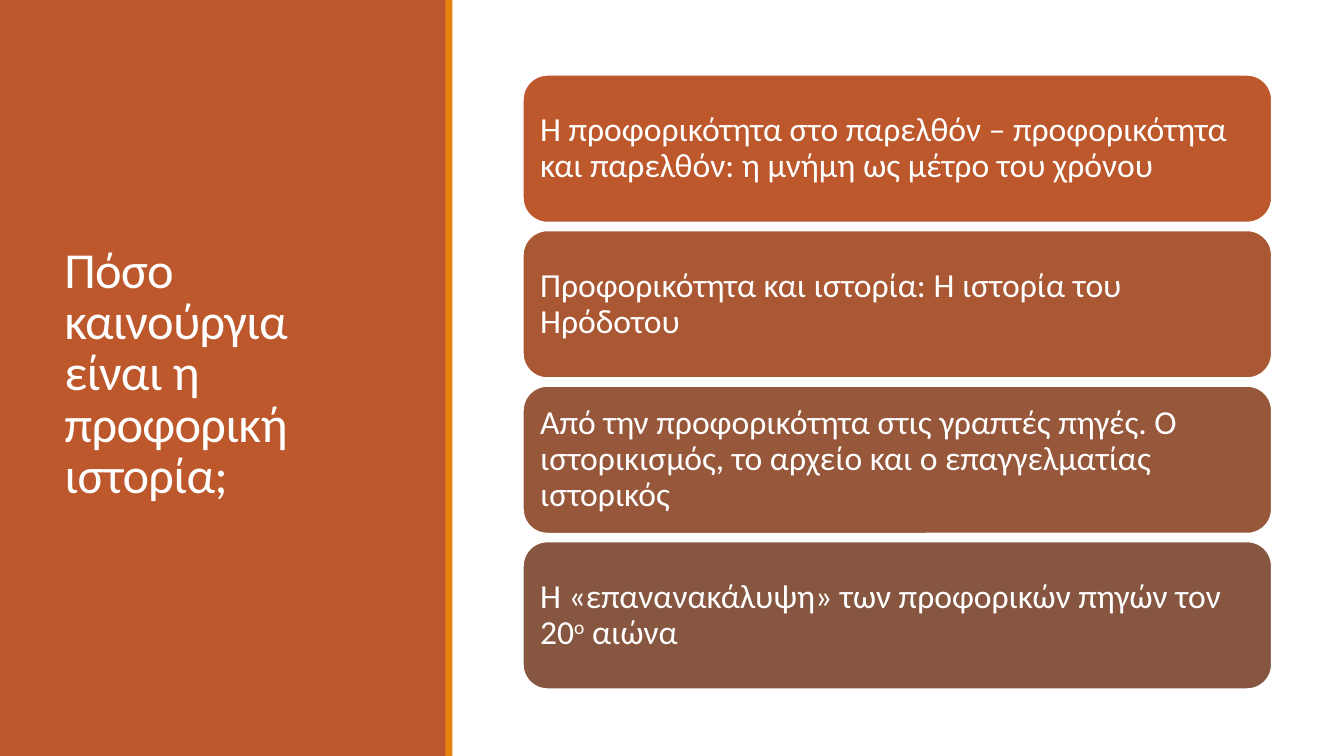
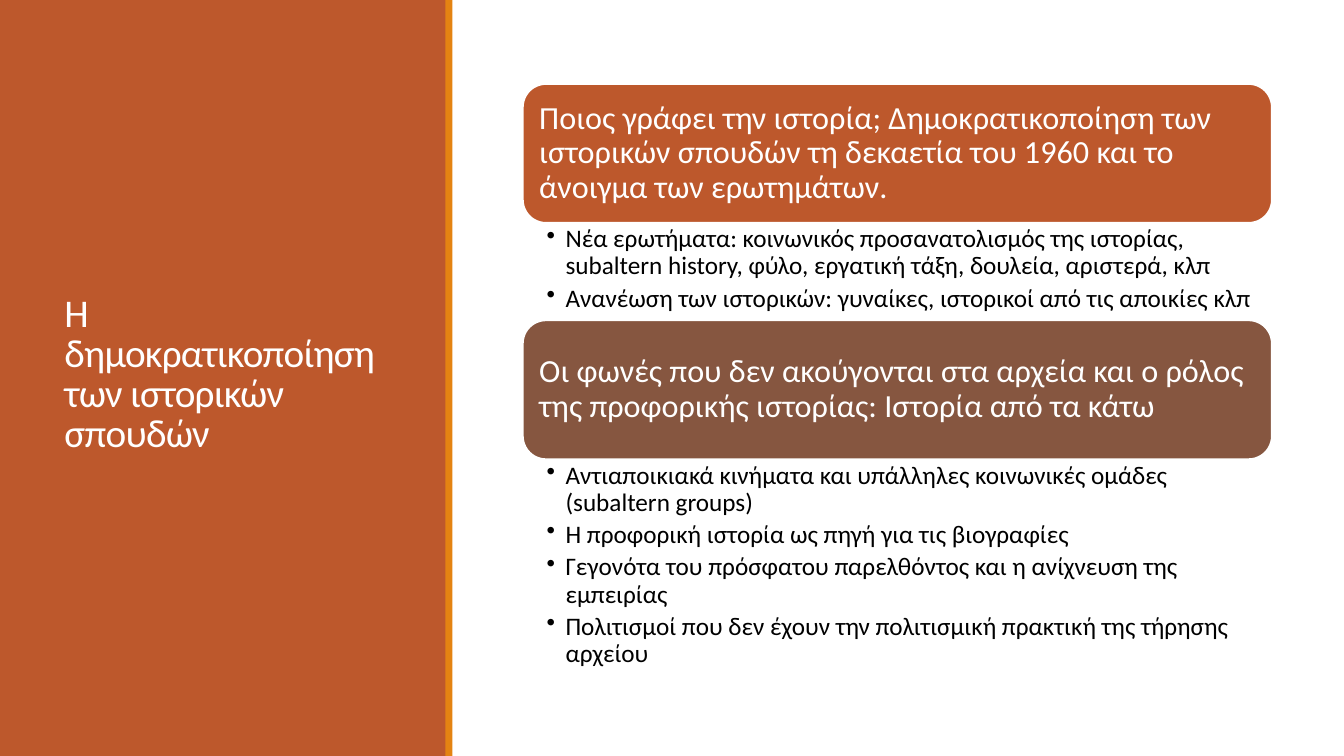
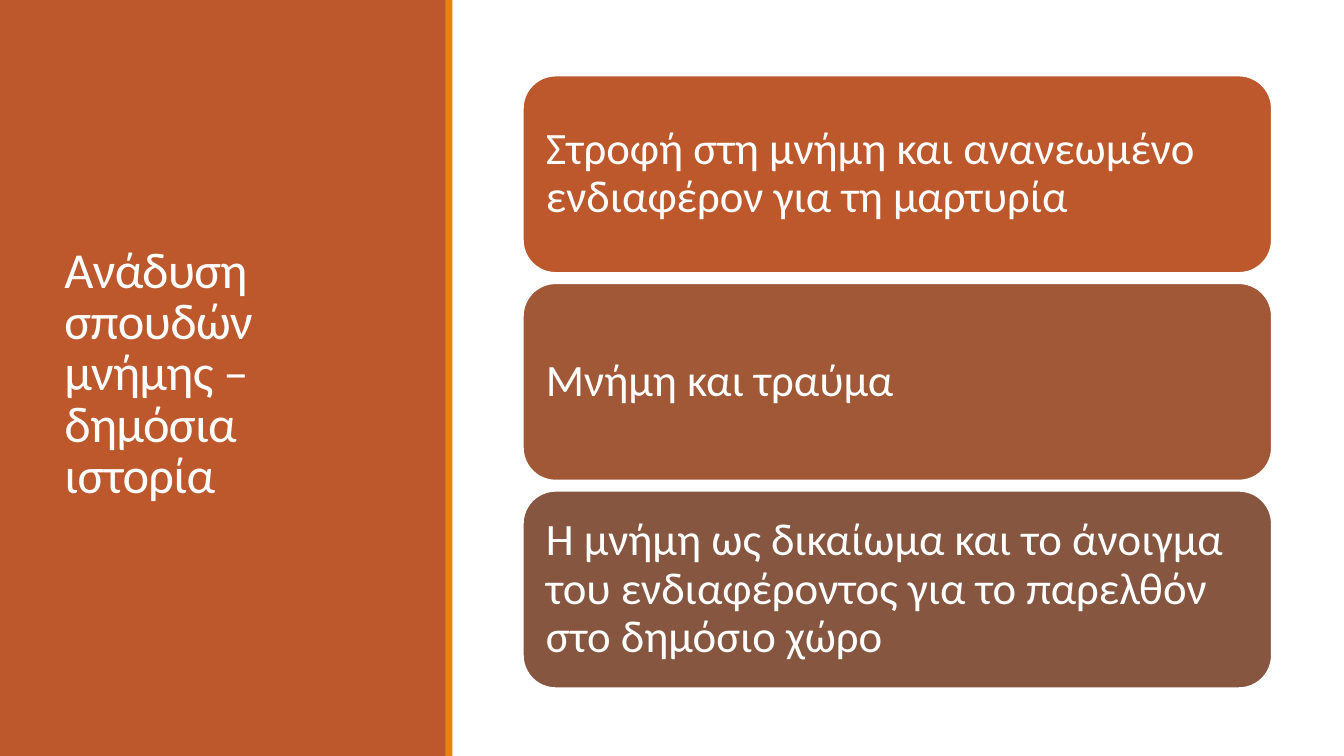
from pptx import Presentation
from pptx.dml.color import RGBColor as RGB
from pptx.enum.shapes import MSO_SHAPE as Kind
from pptx.enum.text import MSO_ANCHOR as Anchor, PP_ALIGN as Align
from pptx.oxml import parse_xml
from pptx.oxml.ns import nsdecls
from pptx.util import Pt

RUST = RGB(0xBD, 0x58, 0x2C)
CLAY = RGB(0xAA, 0x58, 0x34)
SIENNA = RGB(0xA0, 0x58, 0x37)
UMBER = RGB(0x97, 0x57, 0x3A)
BROWN = RGB(0x86, 0x56, 0x40)
ORANGE = RGB(0xE4, 0x83, 0x12)
WHITE = RGB(0xFF, 0xFF, 0xFF)
BLACK = RGB(0, 0, 0)
FONT = "Calibri"

# Content: each card is (fill, text, bullets, height of bullets);
# text between two ^ marks is raised
SLIDES = [
    dict(title="Πόσο καινούργια είναι η προφορική ιστορία;", head=36,
         top=53.5, high=105.5, gap=5.6, size=24, cards=[
             (RUST, "Η προφορικότητα στο παρελθόν – προφορικότητα και παρελθόν: "
              "η μνήμη ως μέτρο του χρόνου", [], 0),
             (CLAY, "Προφορικότητα και ιστορία: Η ιστορία του Ηρόδοτου", [], 0),
             (UMBER, "Από την προφορικότητα στις γραπτές πηγές. Ο ιστορικισμός, "
              "το αρχείο και ο επαγγελματίας ιστορικός", [], 0),
             (BROWN, "Η «επανανακάλυψη» των προφορικών πηγών τον 20^ο^ αιώνα", [], 0),
         ]),
    dict(title="Η δημοκρατικοποίηση των ιστορικών σπουδών", head=28,
         top=60, high=99.2, gap=0, size=23, cards=[
             (RUST, "Ποιος γράφει την ιστορία; Δημοκρατικοποίηση των ιστορικών "
              "σπουδών τη δεκαετία του 1960 και το άνοιγμα των ερωτημάτων.", [
                  "Νέα ερωτήματα: κοινωνικός προσανατολισμός της ιστορίας, "
                  "subaltern history, φύλο, εργατική τάξη, δουλεία, αριστερά, κλπ",
                  "Ανανέωση των ιστορικών: γυναίκες, ιστορικοί από τις αποικίες κλπ",
              ], 69.6),
             (BROWN, "Οι φωνές που δεν ακούγονται στα αρχεία και ο ρόλος της "
              "προφορικής ιστορίας: Ιστορία από τα κάτω", [
                  "Αντιαποικιακά κινήματα και υπάλληλες κοινωνικές ομάδες "
                  "(subaltern groups)",
                  "Η προφορική ιστορία ως πηγή για τις βιογραφίες",
                  "Γεγονότα του πρόσφατου παρελθόντος και η ανίχνευση της εμπειρίας",
                  "Πολιτισμοί που δεν έχουν την πολιτισμική πρακτική της τήρησης "
                  "αρχείου",
              ], 157.6),
         ]),
    dict(title="Ανάδυση σπουδών μνήμης – δημόσια ιστορία", head=36,
         top=54, high=141, gap=7.3, size=32, cards=[
             (RUST, "Στροφή στη μνήμη και ανανεωμένο ενδιαφέρον για τη μαρτυρία",
              [], 0),
             (SIENNA, "Μνήμη και τραύμα", [], 0),
             (BROWN, "Η μνήμη ως δικαίωμα και το άνοιγμα του ενδιαφέροντος για το "
              "παρελθόν στο δημόσιο χώρο", [], 0),
         ]),
]

# Shared geometry, in points
WIDE, TALL = 960, 540
PANEL = (0, 0, 319, TALL)
STRIPE = (318.2, 0, 5, TALL)
TITLE = (39, 41, 242.6, 454.3)
LEFT, SPAN = 373.5, 535

# Shared formats
HEAD = dict(bold=False, color=WHITE, line=0.85, after=0)
CARD = dict(bold=False, color=WHITE, line=0.9, after=0)
ITEM = dict(bold=False, color=BLACK, line=0.9, after=3.6)


def put(obj, vals):
    for key, val in vals.items():
        setattr(obj, key, val)


def write(shape, lines, size, look, pads, anchor=Anchor.MIDDLE, track=0):
    """Fill a shape with paragraphs in one format; pads are left, top, right, bottom."""
    frame = shape.text_frame
    sides = ("margin_left", "margin_top", "margin_right", "margin_bottom")
    put(frame, dict(zip(sides, map(Pt, pads)), word_wrap=True,
                    vertical_anchor=anchor))
    for num, text in enumerate(lines):
        para = frame.add_paragraph() if num else frame.paragraphs[0]
        put(para, dict(alignment=Align.LEFT, line_spacing=look["line"],
                       space_after=Pt(look["after"])))
        for pos, part in enumerate(text.split("^")):
            run = para.add_run()
            run.text = part
            put(run.font, dict(name=FONT, size=Pt(size), bold=look["bold"]))
            run.font.color.rgb = look["color"]
            props = run._r.get_or_add_rPr()
            if track:
                props.set("spc", str(track))
            if pos % 2:
                props.set("baseline", "30000")
    return frame


def block(slide, kind, box, fill):
    shape = slide.shapes.add_shape(kind, *map(Pt, box))
    shape.shadow.inherit = False
    shape.fill.solid()
    shape.fill.fore_color.rgb = fill
    shape.line.fill.background()
    return shape


def card(slide, top, high, size, fill, text):
    shape = block(slide, Kind.ROUNDED_RECTANGLE, (LEFT, top, SPAN, high), fill)
    shape.line.color.rgb = WHITE
    shape.line.width = Pt(1.25)
    write(shape, [text], size, CARD, [size * 0.3] * 4)


def items(slide, top, high, lines):
    box = slide.shapes.add_textbox(*map(Pt, (LEFT, top, SPAN, high)))
    frame = write(box, lines, 18, ITEM, (17, 2.2, 13, 2.2), Anchor.TOP)
    for para in frame.paragraphs:
        props = para._p.get_or_add_pPr()
        props.set("marL", str(Pt(13.5)))
        props.set("indent", str(-Pt(13.5)))
        props.append(parse_xml(f'<a:buChar {nsdecls("a")} char="•"/>'))


def side(slide, title, size):
    """Left panel with the slide title and its stripe."""
    block(slide, Kind.RECTANGLE, PANEL, RUST)
    box = slide.shapes.add_textbox(*map(Pt, TITLE))
    write(box, [title], size, HEAD, (7.2, 3.6, 7.2, 3.6), track=-50)
    block(slide, Kind.RECTANGLE, STRIPE, ORANGE)


def main():
    deck = Presentation()
    put(deck, dict(slide_width=Pt(WIDE), slide_height=Pt(TALL)))
    for data in SLIDES:
        slide = deck.slides.add_slide(deck.slide_layouts[6])
        side(slide, data["title"], data["head"])
        # Stack the cards, each with its bullets below
        top, high = data["top"], data["high"]
        for fill, text, lines, room in data["cards"]:
            card(slide, top, high, data["size"], fill, text)
            if lines:
                items(slide, top + high, room, lines)
            top += high + room + data["gap"]
    deck.save("out.pptx")


if __name__ == "__main__":
    main()
